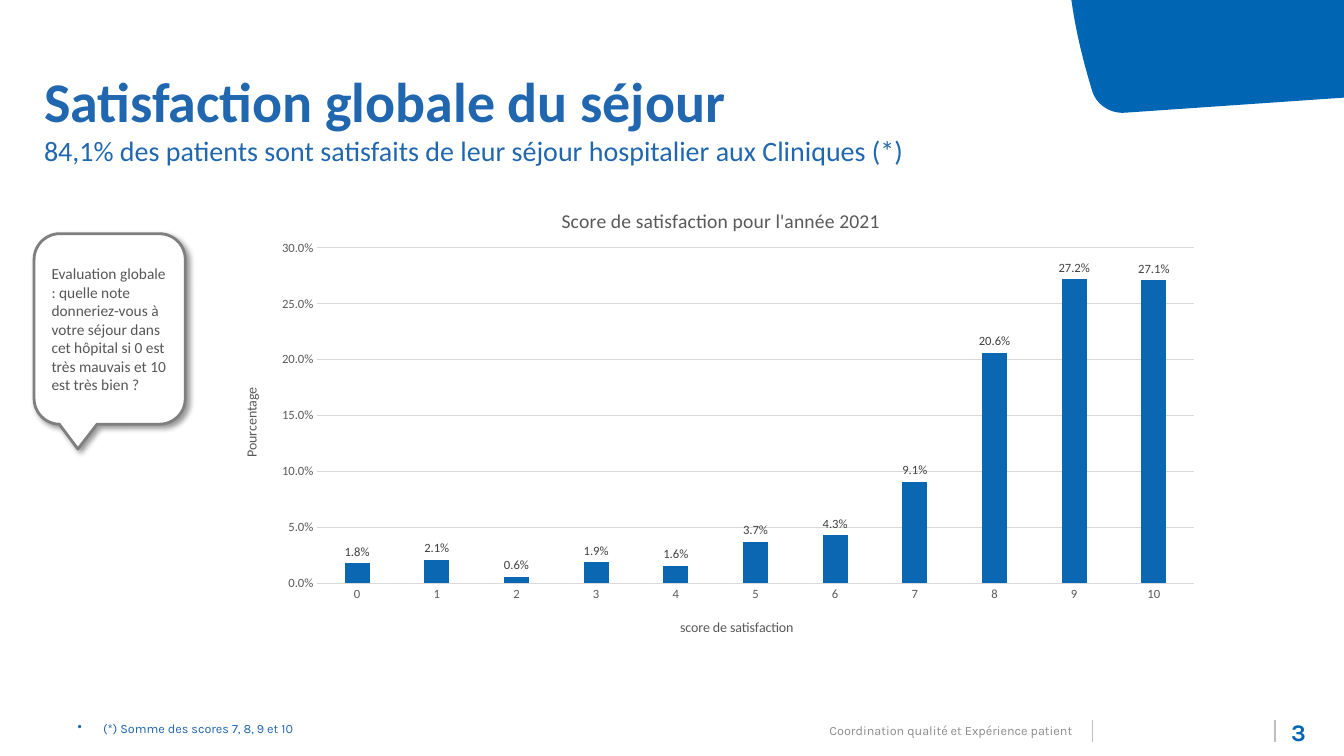
from pptx import Presentation
from pptx.chart.data import CategoryChartData
from pptx.dml.color import RGBColor
from pptx.enum.chart import XL_CHART_TYPE, XL_LABEL_POSITION, XL_TICK_MARK
from pptx.enum.shapes import MSO_CONNECTOR, MSO_SHAPE
from pptx.enum.text import MSO_ANCHOR, PP_ALIGN
from pptx.oxml import parse_xml
from pptx.oxml.ns import nsdecls
from pptx.util import Cm, Pt

BLUE, TITLE_BLUE, BAR_BLUE = "0066B3", "2067AF", "0B67B2"
GREY, GRID = "595959", "D9D9D9"
SCORES = [0.018, 0.021, 0.006, 0.019, 0.016, 0.037, 0.043, 0.091, 0.206, 0.272, 0.271]


def color(hex_value):
    return RGBColor.from_string(hex_value)


def set_all(target, values):
    for name, value in values.items():
        setattr(target, name, value)


def bezier(p0, p1, p2, p3, steps=16):
    """Return points along a cubic curve, without its start."""
    points = []
    for i in range(1, steps + 1):
        t = i / steps
        weights = ((1 - t) ** 3, 3 * t * (1 - t) ** 2, 3 * t * t * (1 - t), t ** 3)
        points.append(tuple(sum(w * p[k] for w, p in zip(weights, (p0, p1, p2, p3)))
                            for k in (0, 1)))
    return points


def place(element, x, y, w=None, h=None):
    """Fix a chart title or the plot area at fractions of the chart."""
    for old in element.findall("{*}layout"):
        element.remove(old)
    target = '<c:layoutTarget val="inner"/>' if w else ""
    sizes = f'<c:w val="{w}"/><c:h val="{h}"/>' if w else ""
    layout = parse_xml(
        f'<c:layout {nsdecls("c")}><c:manualLayout>{target}<c:xMode val="edge"/>'
        f'<c:yMode val="edge"/><c:x val="{x}"/><c:y val="{y}"/>{sizes}'
        '</c:manualLayout></c:layout>')
    text = element.find("{*}tx")
    element.insert(0 if text is None else 1, layout)


class Deck:
    """Slide with its text style."""

    def __init__(self, slide, font):
        self.s, self.font = slide, font

    def style(self, font, size, hex_value, name=None, bold=False):
        set_all(font, {"name": name or self.font, "size": Pt(size), "bold": bold})
        font.color.rgb = color(hex_value)

    def line(self, x, top, bottom):
        ln = self.s.shapes.add_connector(
            MSO_CONNECTOR.STRAIGHT, Cm(x), Cm(top), Cm(x), Cm(bottom))
        ln.line.color.rgb = color("BFBFBF")
        ln.line.width = Pt(1)
        ln._element.spPr.append(parse_xml(f'<a:effectLst {nsdecls("a")}/>'))

    def outline(self, points, fill):
        start, *rest = [(Cm(x), Cm(y)) for x, y in points]
        builder = self.s.shapes.build_freeform(*start)
        builder.add_line_segments(rest, close=True)
        sp = builder.convert_to_shape()
        sp.shadow.inherit = False
        sp.fill.solid()
        sp.fill.fore_color.rgb = color(fill)
        sp.line.fill.background()

    def text(self, box, paragraphs, anchor=MSO_ANCHOR.TOP, margin=None,
             align=PP_ALIGN.LEFT, spacing=None, bullet=None):
        """Add a text box; each paragraph is (text, style values)."""
        tf = self.s.shapes.add_textbox(*map(Cm, box)).text_frame
        set_all(tf, {"word_wrap": True, "vertical_anchor": anchor})
        if margin is not None:
            sides = ("left", "top", "right", "bottom")
            set_all(tf, {f"margin_{side}": Cm(margin) for side in sides})
        for i, (text, values) in enumerate(paragraphs):
            p = tf.add_paragraph() if i else tf.paragraphs[0]
            set_all(p, {"alignment": align, "line_spacing": spacing})
            if bullet:
                pPr = p._p.get_or_add_pPr()
                pPr.set("marL", str(Cm(0.64)))
                pPr.set("indent", str(-Cm(0.64)))
                pPr.append(parse_xml(f'<a:buChar {nsdecls("a")} char="{bullet}"/>'))
            r = p.add_run()
            r.text = text
            self.style(r.font, **values)

    def callout(self, box, text, tip):
        sp = self.s.shapes.add_shape(MSO_SHAPE.ROUNDED_RECTANGULAR_CALLOUT, *map(Cm, box))
        for i, value in enumerate(tip):
            sp.adjustments[i] = value
        sp.shadow.inherit = False
        sp.fill.solid()
        sp.fill.fore_color.rgb = color("FFFFFF")
        sp.line.color.rgb = color("7F7F7F")
        sp.line.width = Pt(2)
        sp._element.spPr.find("{*}effectLst").append(parse_xml(
            f'<a:outerShdw {nsdecls("a")} blurRad="{Pt(4)}" dist="{Pt(3)}" dir="2700000" '
            'algn="tl" rotWithShape="0"><a:srgbClr val="000000"><a:alpha val="40000"/>'
            '</a:srgbClr></a:outerShdw>'))
        tf = sp.text_frame
        set_all(tf, {"word_wrap": True, "vertical_anchor": MSO_ANCHOR.MIDDLE})
        p = tf.paragraphs[0]
        p.alignment = PP_ALIGN.LEFT
        r = p.add_run()
        r.text = text
        self.style(r.font, 11, "575656")

    def chart_title(self, owner, title, text, size, x, y):
        owner.has_title = True
        p = title().text_frame.paragraphs[0]
        r = p.add_run()
        r.text = text
        self.style(r.font, size, GREY)
        place(title()._element, x, y)

    def column_chart(self, box, values):
        data = CategoryChartData(number_format="0.0%")
        data.categories = [str(score) for score in range(len(values))]
        data.add_series("Series 1", values)
        chart = self.s.shapes.add_chart(
            XL_CHART_TYPE.COLUMN_CLUSTERED, *map(Cm, box), data).chart
        self.style(chart.font, 10, "000000")
        chart.has_legend = False
        self.chart_title(chart, lambda: chart.chart_title,
                         "Score de satisfaction pour l'année 2021", 14, 0.34, 0.045)
        cat, val = chart.category_axis, chart.value_axis
        set_all(val, {"minimum_scale": 0, "maximum_scale": 0.3, "major_unit": 0.05})
        set_all(val.tick_labels, {"number_format": "0.0%", "number_format_is_linked": False})
        for axis, text, x, y in ((cat, "score de satisfaction", 0.46, 0.92),
                                 (val, "Pourcentage", 0.02, 0.43)):
            self.chart_title(axis, lambda: axis.axis_title, text, 10, x, y)
            set_all(axis, {"major_tick_mark": XL_TICK_MARK.NONE,
                           "minor_tick_mark": XL_TICK_MARK.NONE})
            self.style(axis.tick_labels.font, 9, GREY)
        val.format.line.fill.background()
        for rule in (cat.format.line, val.major_gridlines.format.line):
            rule.color.rgb = color(GRID)
            rule.width = Pt(0.75)
        plot = chart.plots[0]
        set_all(plot, {"gap_width": 219, "overlap": -27, "vary_by_categories": False,
                       "has_data_labels": True})
        labels = plot.data_labels
        set_all(labels, {"show_value": True, "position": XL_LABEL_POSITION.OUTSIDE_END,
                         "number_format": "0.0%", "number_format_is_linked": False})
        self.style(labels.font, 9, "404040")
        fill = plot.series[0].format.fill
        fill.solid()
        fill.fore_color.rgb = color(BAR_BLUE)
        place(chart._chartSpace.chart.plotArea, 0.098, 0.139, 0.881, 0.713)


def main():
    prs = Presentation()
    set_all(prs, {"slide_width": Cm(33.87), "slide_height": Cm(19.05)})
    deck = Deck(prs.slides.add_slide(prs.slide_layouts[6]), "Calibri")

    top, low, bend = (27, 0), (28.35, 2.84), (27.53, 2.31)
    deck.outline([top, (33.87, 0), (33.87, 2.46), low,
                  *bezier(low, (27.99, 2.87), (27.64, 2.64), bend),
                  *bezier(bend, (27.38, 1.8), (27.15, 1.04), top)], BLUE)
    for x in (27.53, 32.13):
        deck.line(x, 18.14, 18.7)

    small = {"size": 9, "name": "Karla"}
    footer = {"anchor": MSO_ANCHOR.MIDDLE, "margin": 0, "spacing": 0.9}
    deck.text((32.54, 18.06, 1.19, 0.74),
              [("3", {"size": 17, "hex_value": BLUE, "name": "Karla", "bold": True})],
              anchor=MSO_ANCHOR.BOTTOM, margin=0)
    deck.text((1.96, 18.11, 12.65, 0.53),
              [("(*) Somme des scores 7, 8, 9 et 10", {**small, "hex_value": TITLE_BLUE})],
              bullet="•", **footer)
    deck.text((15.77, 18.14, 11.25, 0.56),
              [("Coordination qualité et Expérience patient", {**small, "hex_value": "8C8C8C"})],
              align=PP_ALIGN.RIGHT, **footer)

    deck.callout((0.86, 5.89, 3.81, 4.8),
                 "Evaluation globale : quelle note donneriez-vous à votre séjour dans cet "
                 "hôpital si 0 est très mauvais et 10 est très bien ?", (-0.21, 0.63, 0.17))
    deck.column_chart((5.54, 4.6, 25.07, 11.86), SCORES)
    deck.text((0.86, 1.55, 25.17, 2.82), [
        ("Satisfaction globale du séjour", {"size": 40, "hex_value": TITLE_BLUE, "bold": True}),
        ("84,1% des patients sont satisfaits de leur séjour hospitalier aux Cliniques (*)",
         {"size": 20, "hex_value": TITLE_BLUE})])
    prs.save("out.pptx")


if __name__ == "__main__":
    main()
